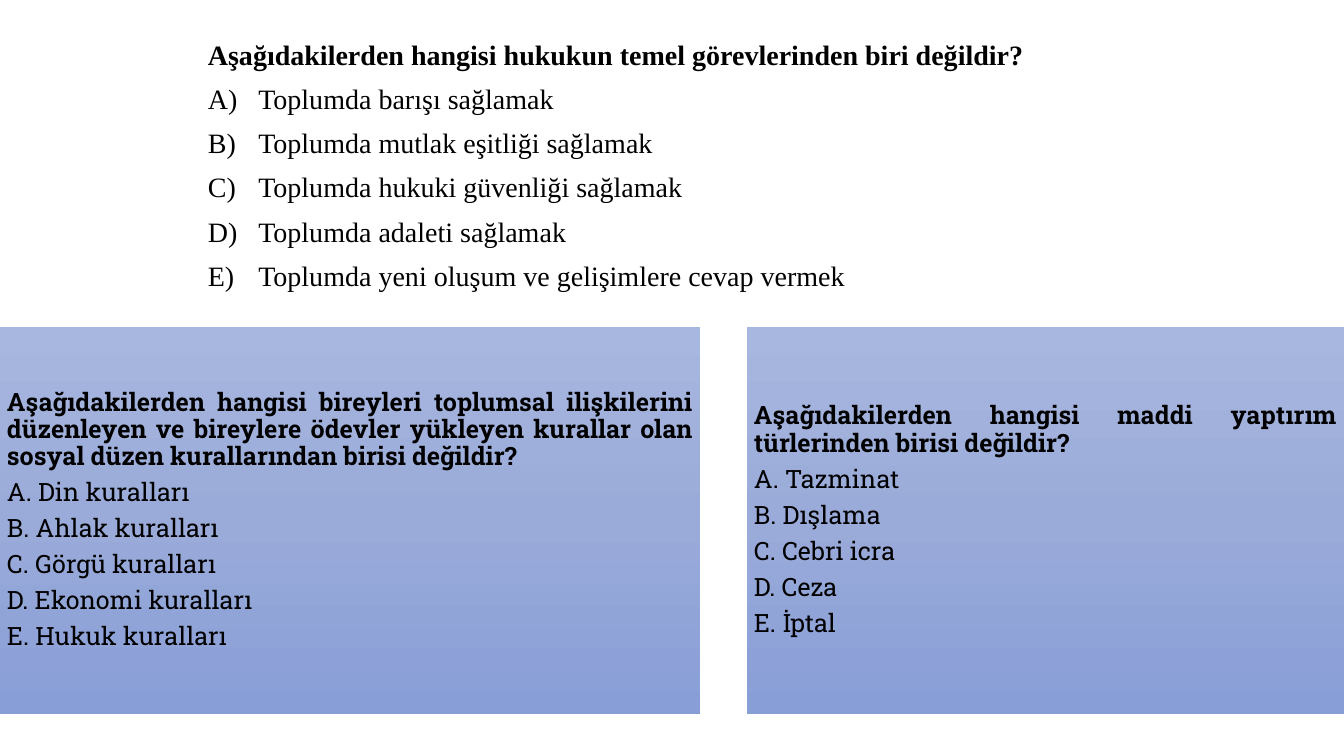
from copy import deepcopy

from pptx import Presentation
from pptx.dml.color import RGBColor
from pptx.enum.shapes import MSO_SHAPE
from pptx.enum.text import MSO_ANCHOR, PP_ALIGN
from pptx.oxml.ns import qn
from pptx.util import Pt

PX = 914400 / 100.8
BLACK = RGBColor(0x00, 0x00, 0x00)
GRADIENT = [
    (0, RGBColor(0xA8, 0xB7, 0xDF)),
    (0.5, RGBColor(0x9A, 0xAB, 0xD9)),
    (1, RGBColor(0x88, 0x9E, 0xD7)),
]

TOP_QUESTION = [
    "Aşağıdakilerden hangisi hukukun temel görevlerinden biri değildir?",
    "A)\tToplumda barışı sağlamak",
    "B)\tToplumda mutlak eşitliği sağlamak",
    "C)\tToplumda hukuki güvenliği sağlamak",
    "D)\tToplumda adaleti sağlamak",
    "E)\tToplumda yeni oluşum ve gelişimlere cevap vermek",
]
SOCIAL_RULES = [
    "Aşağıdakilerden hangisi bireyleri toplumsal ilişkilerini düzenleyen ve "
    "bireylere ödevler yükleyen kurallar olan sosyal düzen kurallarından "
    "birisi değildir?",
    "A. Din kuralları",
    "B. Ahlak kuralları",
    "C. Görgü kuralları",
    "D. Ekonomi kuralları",
    "E. Hukuk kuralları",
]
SANCTIONS = [
    "Aşağıdakilerden hangisi maddi yaptırım türlerinden birisi değildir?",
    "A. Tazminat",
    "B. Dışlama",
    "C. Cebri icra",
    "D. Ceza",
    "E. İptal",
]
CARDS = [(0, 700, SOCIAL_RULES), (747, 597, SANCTIONS)]  # left, width, lines
CARD_TOP, CARD_HEIGHT, CARD_INSET = 327, 387, 7


def px(*lengths):
    return [round(n * PX) for n in lengths]


def write_question(tf, lines, font, size, align, before=0, after=0):
    """Fill the frame with a bold question followed by its options."""
    tf.word_wrap = True
    tf.text = "\n".join(lines)
    for i, p in enumerate(tf.paragraphs):
        p.alignment = align
        p.line_spacing = 0.9
        p.space_before = Pt(before if i else 0)
        p.space_after = Pt(after)
        for r in p.runs:
            r.font.name = font
            r.font.size = Pt(size)
            r.font.bold = i == 0
            r.font.color.rgb = BLACK


def fill_gradient(sp):
    sp.fill.gradient()
    sp.fill.gradient_angle = 270
    stops = sp._element.spPr.find(".//" + qn("a:gsLst"))
    stops.append(deepcopy(stops[-1]))
    for stop, (position, color) in zip(sp.fill.gradient_stops, GRADIENT):
        stop.position = position
        stop.color.rgb = color


def add_card(slide, left, width, lines):
    sp = slide.shapes.add_shape(
        MSO_SHAPE.RECTANGLE, *px(left, CARD_TOP, width, CARD_HEIGHT))
    sp.shadow.inherit = False
    sp.line.fill.background()
    fill_gradient(sp)
    tf = sp.text_frame
    tf.vertical_anchor = MSO_ANCHOR.MIDDLE
    inset, = px(CARD_INSET)
    tf.margin_left = tf.margin_right = tf.margin_top = tf.margin_bottom = inset
    write_question(tf, lines, "Roboto Slab", 18, PP_ALIGN.JUSTIFY, after=6.3)


def main():
    prs = Presentation()
    prs.slide_width, prs.slide_height = px(1344, 756)
    slide = prs.slides.add_slide(prs.slide_layouts[6])
    box = slide.shapes.add_textbox(*px(198, 36, 961, 290))
    write_question(box.text_frame, TOP_QUESTION, "Times New Roman", 20,
                   PP_ALIGN.LEFT, before=10)
    for card in CARDS:
        add_card(slide, *card)
    prs.save("out.pptx")


if __name__ == "__main__":
    main()
